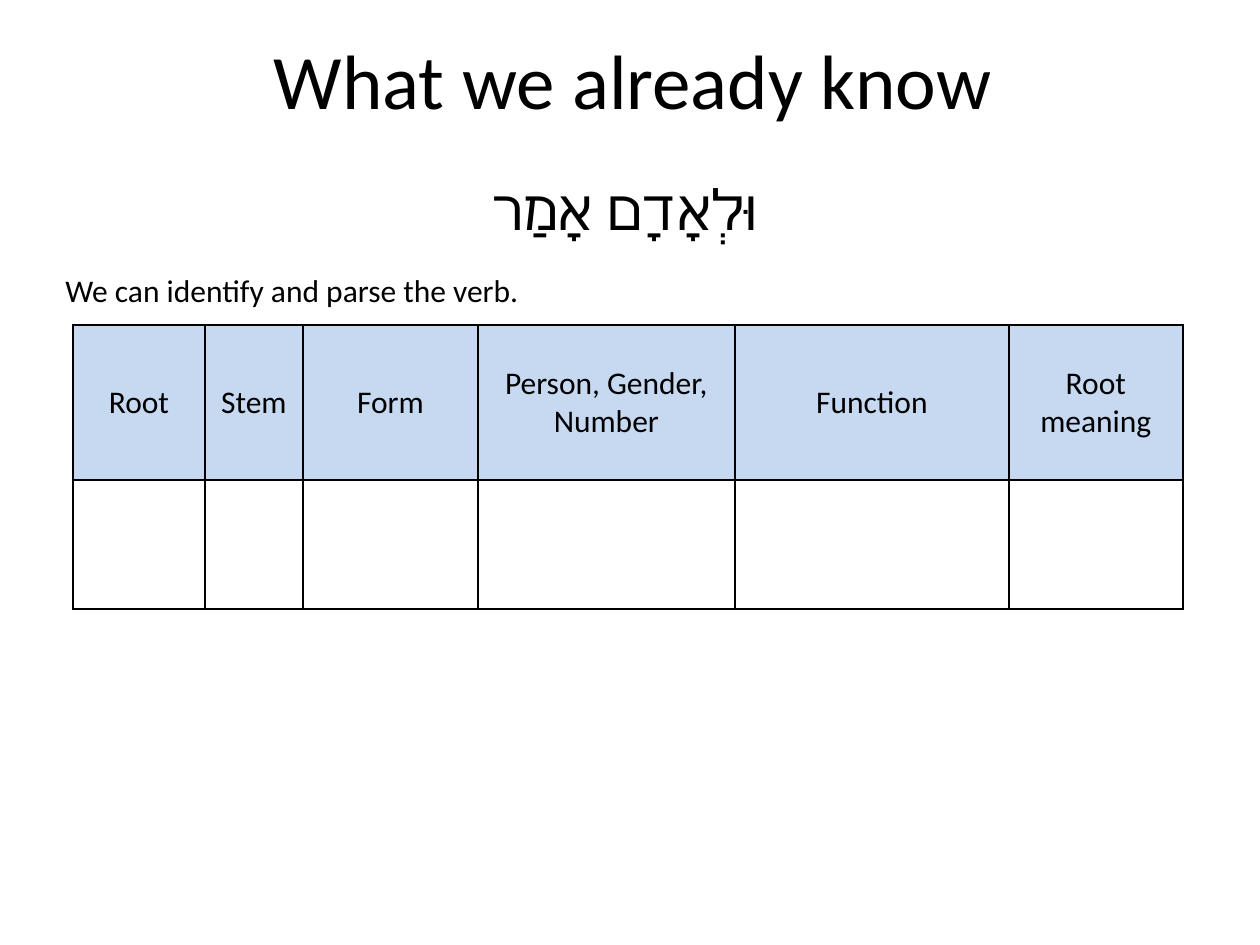
from dataclasses import dataclass

from lxml import etree
from pptx import Presentation
from pptx import util as u
from pptx.dml.color import RGBColor
from pptx.enum import text
from pptx.oxml import ns

PX_PER_INCH = 126


@dataclass(frozen=True)
class Theme:
    ink: RGBColor = RGBColor(0x00, 0x00, 0x00)
    header_fill: RGBColor = RGBColor(0xC6, 0xD9, 0xF1)
    latin_font: str = "Calibri"
    hebrew_font: str = "Roboto"
    title_size: int = 44
    hebrew_size: int = 32
    body_size: int = 18
    border_width: int = 1


@dataclass(frozen=True)
class Box:
    left: int
    top: int
    width: int
    height: int

    def emu(self) -> tuple[u.Emu, ...]:
        return tuple(map(px, (self.left, self.top, self.width, self.height)))


@dataclass(frozen=True)
class Column:
    heading: tuple[str, ...]
    width: int


THEME = Theme()
TITLE_BOX = Box(66, 0, 1134, 158)
VERSE_BOX = Box(53, 168, 1144, 93)
CAPTION_BOX = Box(53, 265, 1119, 50)
TABLE_LEFT, TABLE_TOP = 73, 325
HEADER_HEIGHT, ANSWER_HEIGHT = 155, 129
COLUMNS = (
    Column(("Root",), 132),
    Column(("Stem",), 98),
    Column(("Form",), 175),
    Column(("Person, Gender,", "Number"), 257),
    Column(("Function",), 274),
    Column(("Root meaning",), 174),
)


def px(length: int) -> u.Emu:
    return u.Emu(round(length * 914400 / PX_PER_INCH))


def write(frame, lines: tuple[str, ...], size: int, font: str = THEME.latin_font,
          align=text.PP_ALIGN.CENTER) -> None:
    """Fill a text frame with one styled paragraph per line."""
    for index, line in enumerate(lines):
        paragraph = frame.add_paragraph() if index else frame.paragraphs[0]
        paragraph.alignment = align
        run = paragraph.add_run()
        run.text = line
        run.font.name = font
        run.font.size = u.Pt(size)
        run.font.color.rgb = THEME.ink


def add_text(slide, box: Box, line: str, size: int, **style):
    frame = slide.shapes.add_textbox(*box.emu()).text_frame
    frame.word_wrap = True
    write(frame, (line,), size, **style)
    return frame


def set_right_to_left(paragraph, font: str) -> None:
    """Set the reading direction and the complex-script font."""
    paragraph._p.get_or_add_pPr().set("rtl", "1")
    for run in paragraph.runs:
        properties = run._r.get_or_add_rPr()
        etree.SubElement(properties, ns.qn("a:cs"), typeface=font)


def add_borders(cell) -> None:
    properties = cell._tc.get_or_add_tcPr()
    for index, side in enumerate(("lnL", "lnR", "lnT", "lnB")):
        line = etree.Element(ns.qn(f"a:{side}"), w=str(u.Pt(THEME.border_width)))
        fill = etree.SubElement(line, ns.qn("a:solidFill"))
        etree.SubElement(fill, ns.qn("a:srgbClr"), val=str(THEME.ink))
        properties.insert(index, line)


def add_parsing_table(slide) -> None:
    box = Box(TABLE_LEFT, TABLE_TOP, sum(column.width for column in COLUMNS),
              HEADER_HEIGHT + ANSWER_HEIGHT)
    table = slide.shapes.add_table(2, len(COLUMNS), *box.emu()).table
    table.first_row = table.horz_banding = False
    for row, height in zip(table.rows, (HEADER_HEIGHT, ANSWER_HEIGHT)):
        row.height = px(height)
    for index, column in enumerate(COLUMNS):
        table.columns[index].width = px(column.width)
        header, answer = table.cell(0, index), table.cell(1, index)
        header.vertical_anchor = text.MSO_ANCHOR.MIDDLE
        header.fill.solid()
        header.fill.fore_color.rgb = THEME.header_fill
        write(header.text_frame, column.heading, THEME.body_size)
        answer.fill.background()
        for cell in (header, answer):
            add_borders(cell)


def main() -> None:
    presentation = Presentation()
    presentation.slide_width, presentation.slide_height = px(1260), px(945)
    slide = presentation.slides.add_slide(presentation.slide_layouts.get_by_name("Title Only"))

    title = slide.shapes.title
    title.left, title.top, title.width, title.height = TITLE_BOX.emu()
    title.text_frame.vertical_anchor = text.MSO_ANCHOR.MIDDLE
    write(title.text_frame, ("What we already know",), THEME.title_size)

    verse = add_text(slide, VERSE_BOX, "וּלְאָדָם אָמַר", THEME.hebrew_size,
                     font=THEME.hebrew_font)
    verse.paragraphs[0].space_before = u.Pt(THEME.hebrew_size * 0.2)
    set_right_to_left(verse.paragraphs[0], THEME.hebrew_font)

    add_parsing_table(slide)
    caption = add_text(slide, CAPTION_BOX, "We can identify and parse the verb.",
                       THEME.body_size, align=text.PP_ALIGN.LEFT)
    caption.auto_size = text.MSO_AUTO_SIZE.SHAPE_TO_FIT_TEXT

    presentation.save("out.pptx")


if __name__ == "__main__":
    main()
